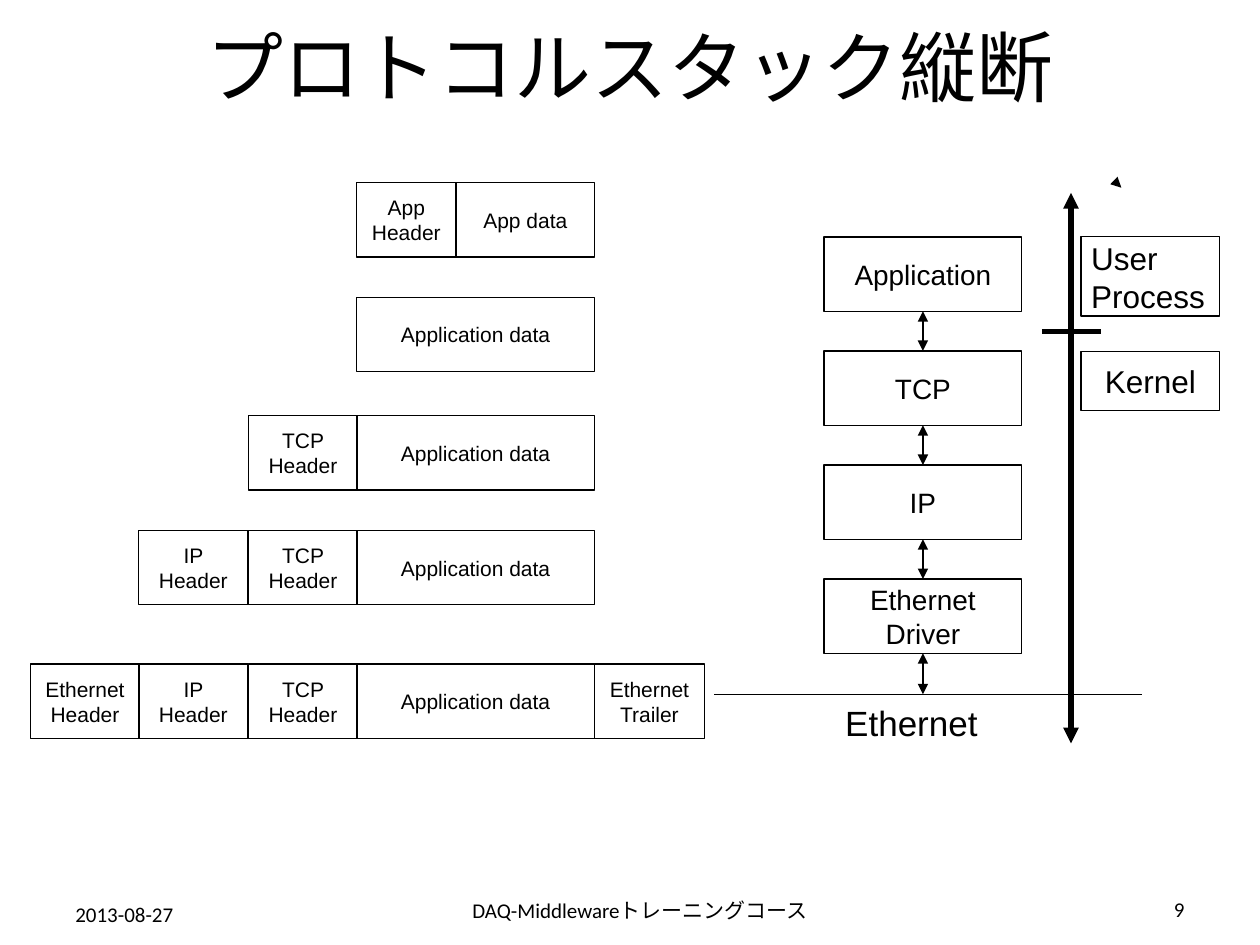
from dataclasses import dataclass

from lxml import etree
from pptx import Presentation
from pptx.dml.color import RGBColor
from pptx.enum import shapes, text
from pptx.oxml import ns
from pptx.util import Inches, Pt


@dataclass(frozen=True)
class Theme:
    """Colours, fonts, type sizes and line widths of the slide."""
    ink: RGBColor = RGBColor(0, 0, 0)
    heading_font: str = "Calibri"
    diagram_font: str = "Arial"
    title: int = 44
    medium: int = 20
    space: int = 18
    layer: int = 16
    small: int = 12
    thin: float = 0.75
    thick: float = 3


THEME = Theme()
CENTER, LEFT, RIGHT = text.PP_ALIGN.CENTER, text.PP_ALIGN.LEFT, text.PP_ALIGN.RIGHT
MIDDLE, TOP = text.MSO_ANCHOR.MIDDLE, text.MSO_ANCHOR.TOP

BOX_HEIGHT = 0.59
HEADER_WIDTH = 0.87
PACKET_COLUMNS = {
    "Ethernet Header": (0.24, HEADER_WIDTH),
    "IP Header": (1.1, HEADER_WIDTH),
    "TCP Header": (1.97, HEADER_WIDTH),
    "Application data": (2.83, 1.89),
    "Ethernet Trailer": (4.72, HEADER_WIDTH),
    "App\nHeader": (2.83, 0.79),
    "App data": (3.62, 1.1),
}
PACKETS = [
    (1.45, ["App\nHeader", "App data"]),
    (2.36, ["Application data"]),
    (3.3, ["TCP Header", "Application data"]),
    (4.21, ["IP Header", "TCP Header", "Application data"]),
    (5.27, ["Ethernet Header", "IP Header", "TCP Header",
            "Application data", "Ethernet Trailer"]),
]
LAYERS = ["Application", "TCP", "IP", "Ethernet\nDriver"]
LAYER_LEFT, LAYER_TOP, LAYER_WIDTH, LAYER_PITCH = 6.54, 1.88, 1.57, 0.905
WIRE_Y = 5.51
AXIS_X = 8.5


def write(shape, content, size, font, align=CENTER, anchor=MIDDLE, wrap=True):
    """Fill a shape with one paragraph per line of content."""
    frame = shape.text_frame
    frame.word_wrap = wrap
    frame.vertical_anchor = anchor
    for index, line in enumerate(content.split("\n")):
        paragraph = frame.add_paragraph() if index else frame.paragraphs[0]
        paragraph.alignment = align
        run = paragraph.add_run()
        run.text = line
        run.font.size = Pt(size)
        run.font.name = font
        run.font.color.rgb = THEME.ink


def add_box(slide, content, area, size, align=CENTER, wrap=True):
    """Add an outlined rectangle with Arial text."""
    box = slide.shapes.add_shape(
        shapes.MSO_SHAPE.RECTANGLE, *(Inches(length) for length in area))
    box.shadow.inherit = False
    box.fill.background()
    box.line.color.rgb = THEME.ink
    box.line.width = Pt(THEME.thin)
    write(box, content, size, THEME.diagram_font, align, wrap=wrap)
    return box


def add_label(slide, content, area, size, font, align=LEFT, anchor=MIDDLE, wrap=True):
    """Add a text box without an outline."""
    label = slide.shapes.add_textbox(*(Inches(length) for length in area))
    write(label, content, size, font, align, anchor, wrap)


def add_line(slide, start, end, width=THEME.thin, head=False, tail=False):
    """Add a straight line with optional triangles at its start and end."""
    line = slide.shapes.add_connector(
        shapes.MSO_CONNECTOR.STRAIGHT,
        *(Inches(length) for length in (*start, *end)))
    line.line.color.rgb = THEME.ink
    line.line.width = Pt(width)
    outline = line.line._get_or_add_ln()
    for tag, wanted in (("a:headEnd", head), ("a:tailEnd", tail)):
        if wanted:
            etree.SubElement(outline, ns.qn(tag), type="triangle")
    etree.SubElement(line._element.spPr, ns.qn("a:effectLst"))
    return line


def add_title(slide, content):
    """Place and fill the title placeholder."""
    title = slide.shapes.title
    title.left, title.top = Inches(0.5), Inches(-0.1)
    title.width, title.height = Inches(9), Inches(1.25)
    write(title, content, THEME.title, THEME.heading_font)


def add_packets(slide):
    """Draw how the data gains headers from layer to layer."""
    for top, fields in PACKETS:
        for field in fields:
            left, width = PACKET_COLUMNS[field]
            add_box(slide, field, (left, top, width, BOX_HEIGHT), THEME.small)


def add_stack(slide):
    """Draw the protocol layers down to the Ethernet line."""
    center = LAYER_LEFT + LAYER_WIDTH / 2
    tops = [LAYER_TOP + index * LAYER_PITCH for index in range(len(LAYERS))]
    boxes = [add_box(slide, name, (LAYER_LEFT, top, LAYER_WIDTH, BOX_HEIGHT),
                     THEME.layer, wrap=False)
             for name, top in zip(LAYERS, tops)]
    add_line(slide, (5.67, WIRE_Y), (9.06, WIRE_Y))
    for index, box in enumerate(boxes):
        last = index == len(boxes) - 1
        end = WIRE_Y if last else tops[index + 1]
        arrow = add_line(slide, (center, tops[index] + BOX_HEIGHT),
                         (center, end), head=True, tail=True)
        arrow.begin_connect(box, 2)
        if not last:
            arrow.end_connect(boxes[index + 1], 0)
    add_label(slide, "Ethernet", (6.61, 5.52, 1.26, 0.44), THEME.medium,
              THEME.diagram_font, anchor=TOP, wrap=False)


def add_spaces(slide):
    """Draw the axis that divides user process from kernel."""
    add_line(slide, (AXIS_X, 1.53), (AXIS_X, 5.9), THEME.thick, head=True, tail=True)
    add_line(slide, (8.27, 2.63), (8.74, 2.63), THEME.thick)
    add_line(slide, (8.89, 1.48), (8.9, 1.49), tail=True)
    user = add_box(slide, "User\nProcess", (8.58, 1.88, 1.1, 0.63),
                   THEME.space, LEFT, wrap=False)
    user.text_frame.margin_left = Inches(0.08)
    add_box(slide, "Kernel", (8.58, 2.79, 1.1, 0.47), THEME.space, wrap=False)


def add_footer(slide):
    """Add the date, the course name and the page number."""
    for content, area, align, anchor in (
        ("2013-08-27", (0.5, 7.1, 2.33, 0.31), LEFT, MIDDLE),
        ("DAQ-Middlewareトレーニングコース", (3.42, 7.07, 3.32, 0.35), CENTER, TOP),
        ("9", (7.17, 7.06, 2.33, 0.31), RIGHT, MIDDLE),
    ):
        add_label(slide, content, area, THEME.small, THEME.heading_font, align, anchor)


def main():
    """Build the protocol stack slide."""
    presentation = Presentation()
    presentation.slide_width, presentation.slide_height = Inches(10), Inches(7.5)
    slide = presentation.slides.add_slide(presentation.slide_layouts[5])
    add_title(slide, "プロトコルスタック縦断")
    add_packets(slide)
    add_stack(slide)
    add_spaces(slide)
    add_footer(slide)
    presentation.save("out.pptx")


if __name__ == "__main__":
    main()
